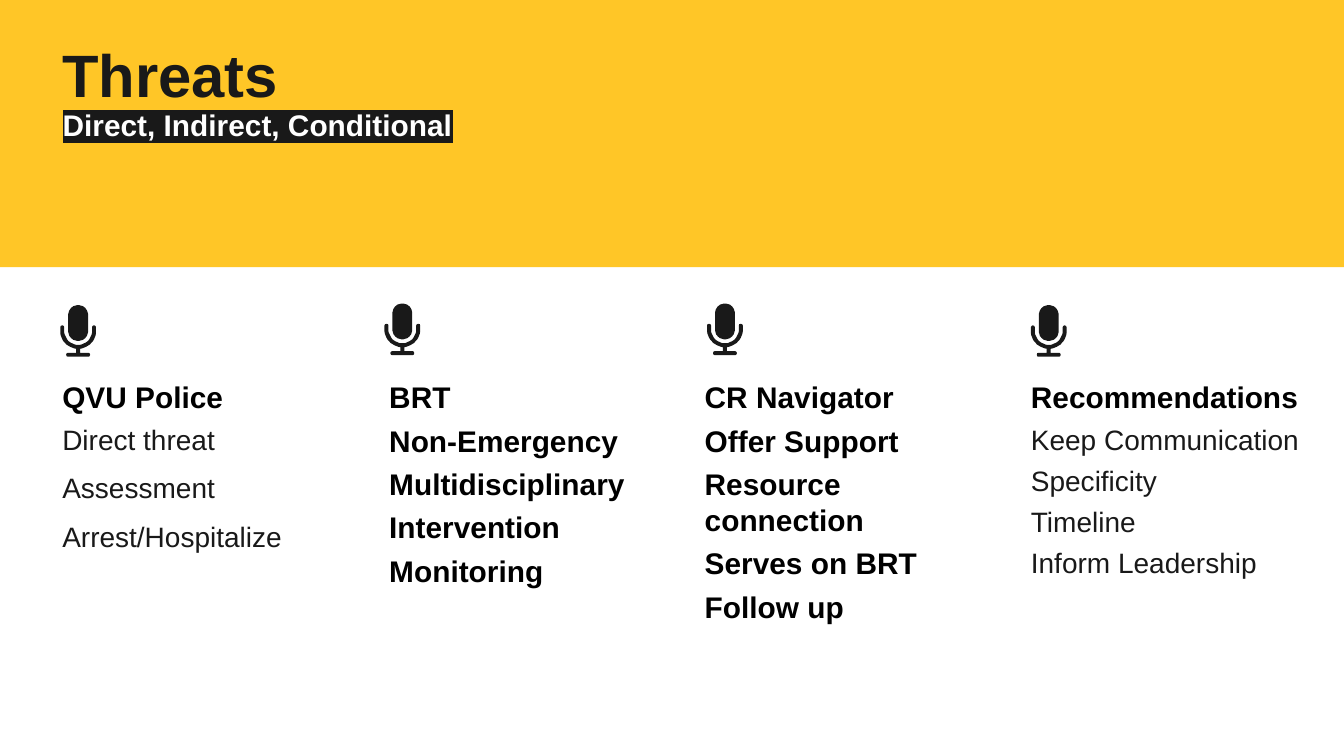
from dataclasses import dataclass
from math import cos, radians, sin

from lxml.etree import SubElement
from pptx import Presentation
from pptx.dml.color import RGBColor
from pptx.enum.shapes import MSO_SHAPE
from pptx.oxml.ns import qn
from pptx.util import Cm, Pt


@dataclass(frozen=True)
class Theme:
    gold: str = "FFC627"
    ink: str = "191919"
    black: str = "000000"
    white: str = "FFFFFF"
    font: str = "Arial"
    title_size: float = 42.67
    heading_size: float = 21.33
    body_size: float = 20
    title_leading: float = 0.9
    body_leading: float = 1.0
    gap: float = 5.33
    title_gap: float = 10.67


def assign(target, values):
    for name, value in values.items():
        setattr(target, name, value)


def arc(x, y, radius, start, end, steps=12):
    angles = [radians(start + (end - start) * step / steps) for step in range(steps + 1)]
    return [(x + radius * cos(angle), y + radius * sin(angle)) for angle in angles]


def mirror(half):
    return half + [(-x, y) for x, y in reversed(half)]


CAPSULE = mirror(arc(0, 25, 25, -90, 0) + arc(0, 65, 25, 0, 90))
STAND = mirror(
    arc(25, 125, 5, 90, -90)
    + [(5, 120), (5, 110)]
    + arc(0, 65, 45, 84, 0)
    + arc(40, 56, 5, 0, -180)
    + arc(0, 65, 35, 0, 90)
)


class SlideWriter:
    def __init__(self, page, theme):
        self.page = page
        self.theme = theme

    def paint(self, shape, color):
        shape.shadow.inherit = False
        shape.fill.solid()
        shape.fill.fore_color.rgb = RGBColor.from_string(color)
        shape.line.fill.background()

    def band(self, left, top, width, height):
        shape = self.page.shapes.add_shape(
            MSO_SHAPE.RECTANGLE, Cm(left), Cm(top), Cm(width), Cm(height)
        )
        self.paint(shape, self.theme.gold)

    def microphone(self, center, top):
        builder = self.page.shapes.build_freeform(*CAPSULE[0], scale=Cm(0.01))
        builder.add_line_segments(CAPSULE[1:], close=True)
        builder.move_to(*STAND[0])
        builder.add_line_segments(STAND[1:], close=True)
        self.paint(builder.convert_to_shape(Cm(center), Cm(top)), self.theme.ink)

    def text(self, left, top, width, height, lines):
        box = self.page.shapes.add_textbox(Cm(left), Cm(top), Cm(width), Cm(height))
        frame = box.text_frame
        margins = ("margin_left", "margin_top", "margin_right", "margin_bottom")
        assign(frame, {"word_wrap": True, **dict.fromkeys(margins, 0)})
        for index, (words, style) in enumerate(lines):
            para = frame.paragraphs[0] if index == 0 else frame.add_paragraph()
            assign(para, style["para"])
            span = para.add_run()
            span.text = words
            assign(span.font, {"name": self.theme.font, **style["font"]})
            span.font.color.rgb = RGBColor.from_string(style["color"])
            if "highlight" in style:
                self.highlight(span, style["highlight"])

    def highlight(self, span, color):
        properties = span.font._element
        mark = SubElement(properties, qn("a:highlight"))
        SubElement(mark, qn("a:srgbClr"), val=color)
        properties.find(qn("a:solidFill")).addnext(mark)


def text_style(size, bold, color, leading, before=0, after=0, **extra):
    return {
        "para": {
            "line_spacing": leading,
            "space_before": Pt(before),
            "space_after": Pt(after),
        },
        "font": {"size": Pt(size), "bold": bold},
        "color": color,
        **extra,
    }


def main():
    deck = Presentation()
    assign(deck, {"slide_width": Cm(33.87), "slide_height": Cm(19.05)})
    page = deck.slides.add_slide(deck.slide_layouts[6])
    theme = Theme()
    writer = SlideWriter(page, theme)

    title = text_style(
        theme.title_size, True, theme.ink, theme.title_leading, after=theme.title_gap
    )
    subtitle = text_style(
        theme.heading_size, True, theme.white, theme.title_leading,
        after=theme.title_gap, highlight=theme.ink,
    )
    heading = text_style(theme.heading_size, True, theme.black, theme.body_leading)
    strong = text_style(
        theme.heading_size, True, theme.black, theme.body_leading, before=theme.gap
    )
    plain = text_style(
        theme.body_size, False, theme.ink, theme.body_leading, before=theme.gap
    )
    airy = text_style(
        theme.body_size, False, theme.ink, theme.body_leading,
        before=theme.gap, after=theme.gap,
    )

    writer.band(0, 0, 33.87, 6.73)
    writer.text(1.57, 1.17, 31, 2.03, [("Threats", title)])
    writer.text(1.58, 2.8, 31, 1.22, [("Direct, Indirect, Conditional", subtitle)])

    columns = [
        (1.57, 6.6, 1.97, 7.69, airy, "QVU Police",
         ["Direct threat", "Assessment", "Arrest/Hospitalize"]),
        (9.81, 6.6, 10.14, 7.65, strong, "BRT",
         ["Non-Emergency", "Multidisciplinary", "Intervention", "Monitoring"]),
        (17.76, 6.93, 18.27, 7.65, strong, "CR Navigator",
         ["Offer Support", "Resource connection", "Serves on BRT", "Follow up"]),
        (25.98, 6.93, 26.43, 7.69, plain, "Recommendations",
         ["Keep Communication", "Specificity", "Timeline", "Inform Leadership"]),
    ]
    for left, width, icon_center, icon_top, style, name, items in columns:
        writer.microphone(icon_center, icon_top)
        lines = [(name, heading)] + [(item, style) for item in items]
        writer.text(left, 9.55, width, 8.33, lines)

    deck.save("out.pptx")


if __name__ == "__main__":
    main()
